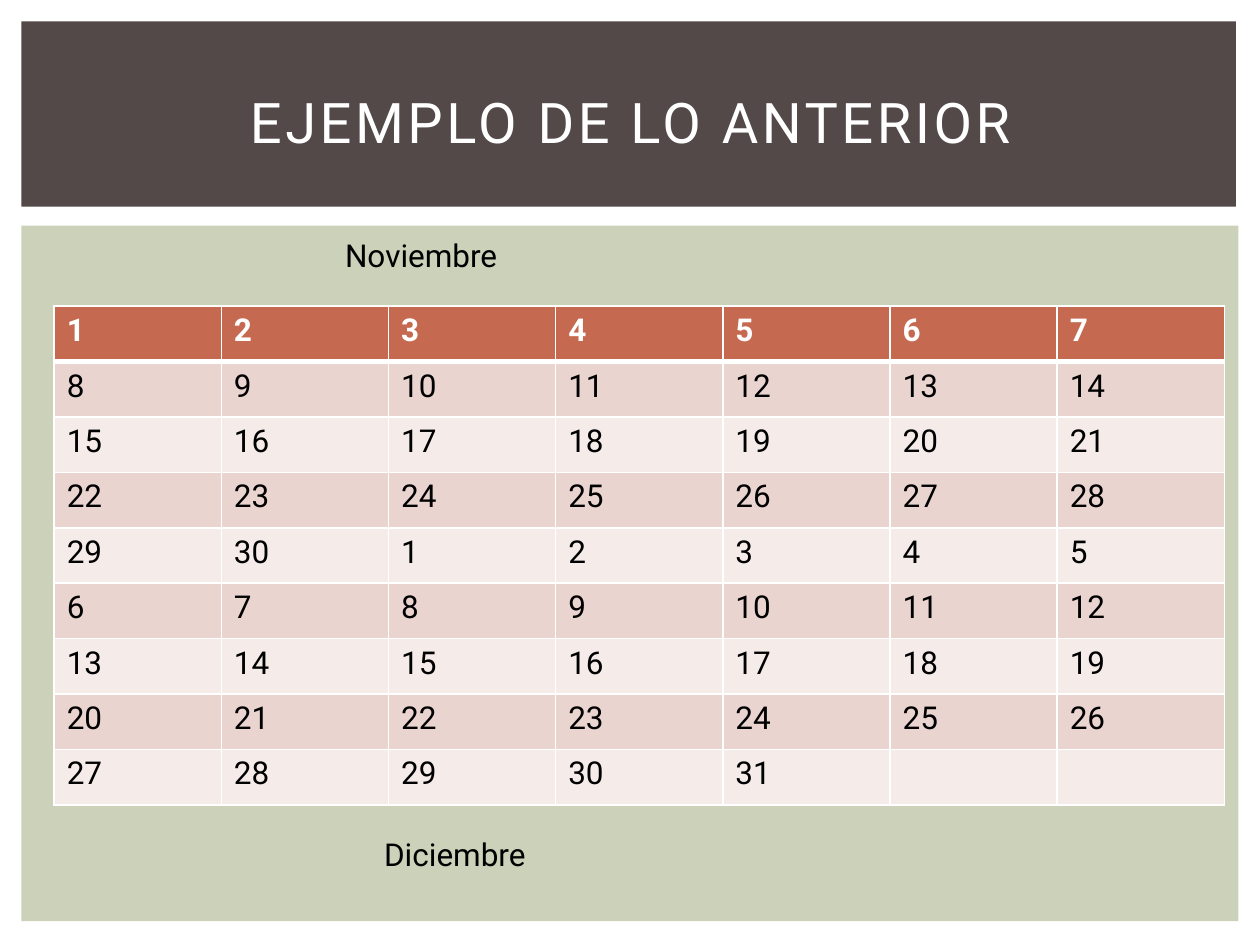
from itertools import chain
from lxml.etree import SubElement
from pptx import Presentation
from pptx.dml.color import RGBColor
from pptx.enum.shapes import MSO_SHAPE
from pptx.enum.text import MSO_ANCHOR, PP_ALIGN
from pptx.oxml.ns import qn
from pptx.util import Emu, Inches, Pt

WIDTH, HEIGHT = Inches(10), Inches(7.5)
WEEK, ROWS = 7, 9
FONT = "Roboto"
WHITE = RGBColor(0xFF, 0xFF, 0xFF)
BLACK = RGBColor(0x00, 0x00, 0x00)
BROWN = RGBColor(0x53, 0x49, 0x49)
GREEN = RGBColor(0xCC, 0xD1, 0xB9)
RUST = RGBColor(0xC6, 0x69, 0x51)
ROSE = RGBColor(0xEA, 0xD4, 0xD0)
BLUSH = RGBColor(0xF5, 0xEB, 0xE9)


def place(left, top, wide, high):
    """Turn percent shares of the slide into lengths."""
    return [Emu(round(share * side / 100)) for share, side in
            zip((left, top, wide, high), (WIDTH, HEIGHT) * 2)]


def write(frame, text, size=18, color=BLACK, bold=False, align=PP_ALIGN.LEFT, gap=0):
    """Put formatted text in the first paragraph of a frame."""
    line = frame.paragraphs[0]
    line.alignment = align
    run = line.add_run()
    run.text = text
    font = run.font
    font.name, font.size, font.bold = FONT, Pt(size), bold
    font.color.rgb = color
    if gap:
        run._r.get_or_add_rPr().set("spc", str(gap * 100))


def panel(slide, area, color):
    """Draw a plain filled rectangle."""
    shape = slide.shapes.add_shape(MSO_SHAPE.RECTANGLE, *place(*area))
    shape.shadow.inherit = False
    shape.fill.solid()
    shape.fill.fore_color.rgb = color
    shape.line.fill.background()


def label(slide, area, text, anchor=MSO_ANCHOR.TOP, **style):
    """Add a wrapped text box."""
    frame = slide.shapes.add_textbox(*place(*area)).text_frame
    frame.word_wrap = True
    frame.vertical_anchor = anchor
    write(frame, text, **style)


def border(cell, top, base):
    """Draw the four white edges of a cell."""
    props = cell._tc.get_or_add_tcPr()
    for side, width in (("L", 1), ("R", 1), ("T", top), ("B", base)):
        edge = SubElement(props, qn(f"a:ln{side}"), w=str(Pt(width)))
        fill = SubElement(edge, qn("a:solidFill"))
        SubElement(fill, qn("a:srgbClr"), val=str(WHITE))


def month_grid(slide, area):
    """Build the table with the days of both months in a row."""
    table = slide.shapes.add_table(ROWS, WEEK, *place(*area)).table
    days = chain(range(1, 31), range(1, 32))
    for spot, cell in enumerate(table.iter_cells()):
        row = spot // WEEK
        head = row == 0
        border(cell, 3 if row == 1 else 1, 3 if head else 1)
        cell.fill.solid()
        cell.fill.fore_color.rgb = RUST if head else ROSE if row % 2 else BLUSH
        day = next(days, None)
        if day:
            write(cell.text_frame, str(day), color=WHITE if head else BLACK, bold=head)


def main():
    """Build the slide and save it."""
    deck = Presentation()
    deck.slide_width, deck.slide_height = WIDTH, HEIGHT
    slide = deck.slides.add_slide(deck.slide_layouts[6])
    panel(slide, (1.7, 23.87, 96.6, 73.6), GREEN)
    panel(slide, (1.7, 2.27, 96.4, 19.6), BROWN)
    label(slide, (4.2, 5.2, 91.7, 15.33), "EJEMPLO DE LO ANTERIOR", MSO_ANCHOR.MIDDLE,
          size=32, color=WHITE, align=PP_ALIGN.CENTER, gap=2)
    month_grid(slide, (4.3, 32.4, 92.9, 52.8))
    label(slide, (26.4, 24.27, 52.8, 5.33), "Noviembre")
    label(slide, (29.5, 87.73, 40.2, 5.33), "Diciembre")
    deck.save("out.pptx")


if __name__ == "__main__":
    main()
